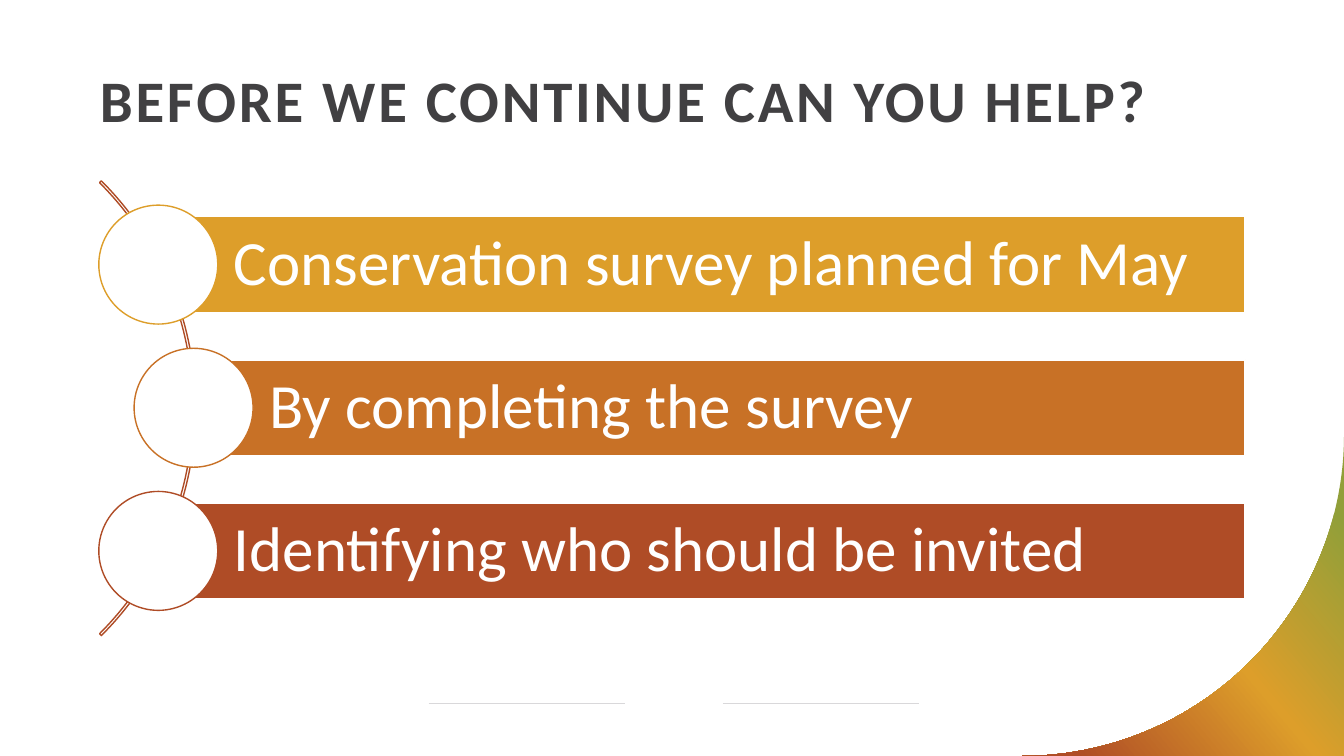
from copy import deepcopy
from math import cos, radians, sin

from lxml.etree import SubElement
from pptx import Presentation
from pptx.dml.color import RGBColor
from pptx.enum.shapes import MSO_CONNECTOR as Connector, MSO_SHAPE as Shape
from pptx.enum.text import MSO_ANCHOR as Anchor, PP_ALIGN as Align
from pptx.oxml.ns import qn
from pptx.util import Pt

PX = 9144  # 100 px to the inch
SLIDE_WIDTH, SLIDE_HEIGHT = 1333, 750
FONT = "Calibri"
COLORS = {
    "white": "FFFFFF",
    "title": "414042",
    "rule": "D9D8DA",
    "green": "919F39",
    "gold": "DD9E2A",
    "orange": "C87126",
    "rust": "AF4C26",
}
BAR_RIGHT, BAR_TOP, BAR_HEIGHT, BAR_PITCH = 1235, 215, 95, 142
CIRCLE = 118
BARS = [
    ("Conservation survey planned for May", 157, "gold"),
    ("By completing the survey", 192, "orange"),
    ("Identifying who should be invited", 157, "rust"),
]


def rgb(name):
    return RGBColor.from_string(COLORS[name])


def px(*lengths):
    return [round(length * PX) for length in lengths]


def add_rule(page, left, right, y):
    rule = page.shapes.add_connector(Connector.STRAIGHT, *px(left, y, right, y))
    rule.line.color.rgb = rgb("rule")
    rule.line.width = Pt(0.5)
    SubElement(rule._element.spPr, qn("a:effectLst"))


def add_outlined(page, kind, bounds, line, fill=None):
    shape = page.shapes.add_shape(kind, *px(*bounds))
    shape.shadow.inherit = False
    if fill:
        shape.fill.solid()
        shape.fill.fore_color.rgb = rgb(fill)
    else:
        shape.fill.background()
    shape.line.color.rgb = rgb(line)
    shape.line.width = Pt(1)
    return shape


def write(shape, text, size, color, insets, anchor, bold=False):
    """Fill a shape with one left-aligned line; insets run left, top, right, bottom."""
    frame = shape.text_frame
    frame.word_wrap = True
    frame.vertical_anchor = anchor
    (frame.margin_left, frame.margin_top,
     frame.margin_right, frame.margin_bottom) = px(*insets)
    para = frame.paragraphs[0]
    para.alignment = Align.LEFT
    para.line_spacing = 0.9
    para.font.name = FONT
    para.font.size = Pt(size)
    para.font.bold = bold
    para.font.color.rgb = rgb(color)
    span = para.add_run()
    span.text = text
    return span


def add_title(page, text):
    box = page.shapes.add_textbox(*px(92, 66, 1150, 102))
    span = write(box, text, 42, "title", (7, 5, 7, 5), Anchor.TOP, bold=True)
    span._r.get_or_add_rPr().set("spc", "200")


def add_corner(page):
    """Gradient area between a quarter circle and the bottom right slide corner."""
    radius = 319
    center_x, center_y = SLIDE_WIDTH - radius, SLIDE_HEIGHT - radius
    arc = [
        px(center_x + radius * cos(radians(angle)),
           center_y + radius * sin(radians(angle)))
        for angle in range(91)
    ]
    builder = page.shapes.build_freeform(*px(SLIDE_WIDTH, SLIDE_HEIGHT))
    builder.add_line_segments(arc, close=True)
    corner = builder.convert_to_shape()
    corner.shadow.inherit = False
    corner.line.fill.background()
    corner.fill.gradient()
    corner.fill.gradient_angle = 360 - 140
    stop_list = corner._element.spPr.find(".//" + qn("a:gsLst"))
    stop_list.append(deepcopy(stop_list[0]))
    stops = [(0.12, "green"), (0.5, "gold"), (0.91, "rust")]
    for stop, (position, color) in zip(corner.fill.gradient_stops, stops):
        stop.position = position
        stop.color.rgb = rgb(color)


def add_arc(page):
    arc = add_outlined(page, Shape.BLOCK_ARC, (-444, 86, 638, 638), "rust")
    for index, value in enumerate((189, 27, 0.004)):
        arc.adjustments[index] = value


def add_bar(page, text, left, top, color):
    bar = add_outlined(page, Shape.RECTANGLE,
                       (left, top, BAR_RIGHT - left, BAR_HEIGHT), "white", color)
    write(bar, text, 45, "white", (75, 12, 12, 12), Anchor.MIDDLE)
    circle_top = top + (BAR_HEIGHT - CIRCLE) / 2
    add_outlined(page, Shape.OVAL,
                 (left - CIRCLE / 2, circle_top, CIRCLE, CIRCLE), color, "white")


def main():
    deck = Presentation()
    deck.slide_width, deck.slide_height = px(SLIDE_WIDTH, SLIDE_HEIGHT)
    page = deck.slides.add_slide(deck.slide_layouts[6])
    for left in (425, 717):
        add_rule(page, left, left + 195, 698)
    add_corner(page)
    add_title(page, "BEFORE WE CONTINUE CAN YOU HELP?")
    add_arc(page)
    for row, (text, left, color) in enumerate(BARS):
        add_bar(page, text, left, BAR_TOP + row * BAR_PITCH, color)
    deck.save("out.pptx")


if __name__ == "__main__":
    main()
